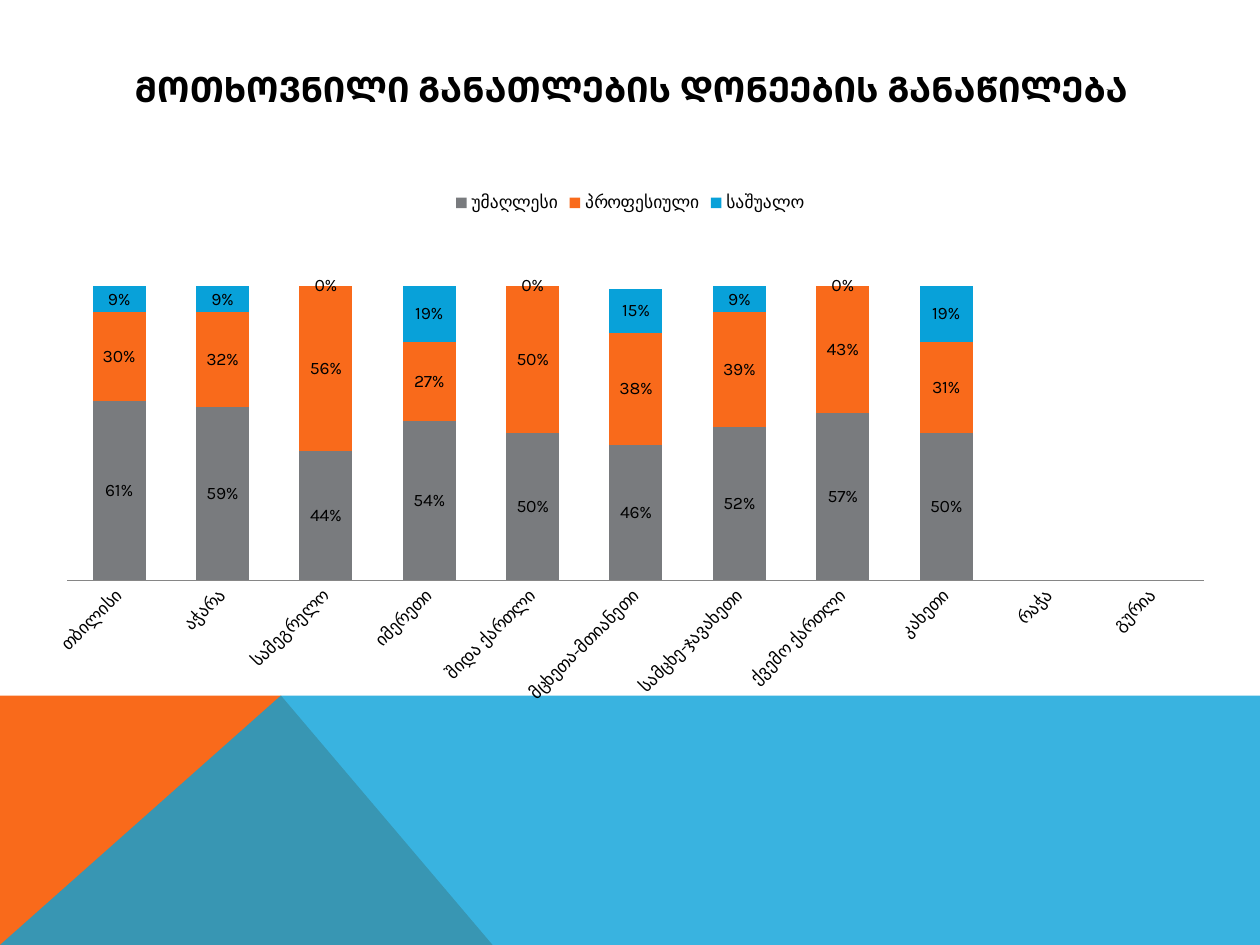
"""Build a slide with a stacked column chart of education levels by region."""
from lxml import etree
from pptx import Presentation
from pptx.chart.data import CategoryChartData
from pptx.dml.color import RGBColor
from pptx.enum.chart import XL_CHART_TYPE, XL_LEGEND_POSITION, XL_TICK_MARK
from pptx.enum.text import MSO_ANCHOR, PP_ALIGN
from pptx.oxml import parse_xml
from pptx.oxml.ns import nsdecls, qn
from pptx.util import Inches, Pt

STACKED = XL_CHART_TYPE.COLUMN_STACKED
LEGEND_TOP = XL_LEGEND_POSITION.TOP
NO_TICK = XL_TICK_MARK.NONE
MIDDLE = MSO_ANCHOR.MIDDLE
CENTER = PP_ALIGN.CENTER

FONT = "Karla"
COLORS = {"black": "000000", "gray": "797B7E", "orange": "F96A1B",
          "blue": "08A1D9", "axis": "868686"}
TITLE = "ᲛᲝᲗᲮᲝᲕᲜᲘᲚᲘ ᲒᲐᲜᲐᲗᲚᲔᲑᲘᲡ ᲓᲝᲜᲔᲔᲑᲘᲡ ᲒᲐᲜᲐᲬᲘᲚᲔᲑᲐ"
REGIONS = ["თბილისი", "აჭარა", "სამეგრელო", "იმერეთი", "შიდა ქართლი",
           "მცხეთა-მთიანეთი", "სამცხე-ჯავახეთი", "ქვემო ქართლი", "კახეთი",
           "რაჭა", "გურია"]
LEVELS = [
    ("უმაღლესი", "gray", [0.61, 0.59, 0.44, 0.54, 0.5, 0.46, 0.52, 0.57, 0.5, None, None]),
    ("პროფესიული", "orange", [0.3, 0.32, 0.56, 0.27, 0.5, 0.38, 0.39, 0.43, 0.31, None, None]),
    ("საშუალო", "blue", [0.09, 0.09, 0, 0.19, 0, 0.15, 0.09, 0, 0.19, None, None]),
]
PLOT_AREA = {"x": 0.03, "y": 0.09, "w": 0.95, "h": 0.66}


class SlideBuilder:
    """Hold the style and the current page."""

    def __init__(self, deck):
        self.page = deck.slides.add_slide(deck.slide_layouts[5])

    def color(self, name):
        return RGBColor.from_string(COLORS[name])

    def style(self, font, size, bold=False):
        font.name, font.size, font.bold = FONT, Pt(size), bold
        font.color.rgb = self.color("black")

    def title(self, text, left, top, width, height):
        box = self.page.shapes.title
        box.left, box.top = Inches(left), Inches(top)
        box.width, box.height = Inches(width), Inches(height)
        frame = box.text_frame
        frame.word_wrap, frame.vertical_anchor = True, MIDDLE
        para = frame.paragraphs[0]
        para.alignment = CENTER
        span = para.add_run()
        span.text = text
        self.style(span.font, 20, True)

    def polygon(self, points, color, opacity=100):
        corners = [(Inches(x), Inches(y)) for x, y in points]
        builder = self.page.shapes.build_freeform(*corners[0])
        builder.add_line_segments(corners[1:], close=True)
        shape = builder.convert_to_shape()
        shape.shadow.inherit = False
        shape.line.fill.background()
        shape.fill.solid()
        shape.fill.fore_color.rgb = self.color(color)
        if opacity < 100:
            tint = shape.fill._xPr.find(f"{qn('a:solidFill')}/{qn('a:srgbClr')}")
            etree.SubElement(tint, qn("a:alpha"), val=str(opacity * 1000))

    def place_plot(self, chart):
        area = chart._chartSpace.chart.plotArea
        for layout in area.findall(qn("c:layout")):
            area.remove(layout)
        modes = "".join(f'<c:{side}Mode val="edge"/>' for side in "xy")
        sizes = "".join(f'<c:{key} val="{value}"/>' for key, value in PLOT_AREA.items())
        area.insert(0, parse_xml(
            f'<c:layout {nsdecls("c")}><c:manualLayout><c:layoutTarget val="inner"/>'
            f'{modes}{sizes}</c:manualLayout></c:layout>'))

    def stacked_chart(self, categories, levels, left, top, width, height):
        data = CategoryChartData(number_format="0%")
        data.categories = categories
        for name, _, values in levels:
            data.add_series(name, values)
        chart = self.page.shapes.add_chart(
            STACKED, Inches(left), Inches(top), Inches(width), Inches(height), data).chart
        self.style(chart.font, 10)
        chart.has_title = False
        chart.has_legend = True
        chart.legend.position = LEGEND_TOP
        chart.legend.include_in_layout = False
        plot = chart.plots[0]
        plot.gap_width, plot.overlap, plot.vary_by_categories = 95, 100, False
        for series, (_, color, _) in zip(plot.series, levels):
            series.format.fill.solid()
            series.format.fill.fore_color.rgb = self.color(color)
            labels = series.data_labels
            labels.show_value = True
            labels.number_format, labels.number_format_is_linked = "0%", False
            self.style(labels.font, 10)
        regions, shares = chart.category_axis, chart.value_axis
        regions.major_tick_mark = regions.minor_tick_mark = NO_TICK
        regions.format.line.color.rgb = self.color("axis")
        self.style(regions.tick_labels.font, 10)
        regions._element.txPr.find(qn("a:bodyPr")).set("rot", "-2700000")
        shares.minimum_scale, shares.maximum_scale = 0, 1.2
        shares.has_major_gridlines = shares.visible = False
        shares.tick_labels.number_format = "0%"
        shares.tick_labels.number_format_is_linked = False
        self.place_plot(chart)


def main():
    deck = Presentation()
    deck.slide_width, deck.slide_height = Inches(10), Inches(7.5)
    slide = SlideBuilder(deck)
    slide.polygon([(0, 7.5), (0, 5.52), (2.23, 5.52), (3.91, 7.5)], "orange")
    slide.polygon([(0, 7.5), (2.23, 5.52), (10, 5.52), (10, 7.5)], "blue", 80)
    slide.title(TITLE, 0.9, 0.4, 8.22, 0.6)
    slide.stacked_chart(REGIONS, LEVELS, 0.25, 1.42, 9.5, 4.25)
    deck.save("out.pptx")


if __name__ == "__main__":
    main()
